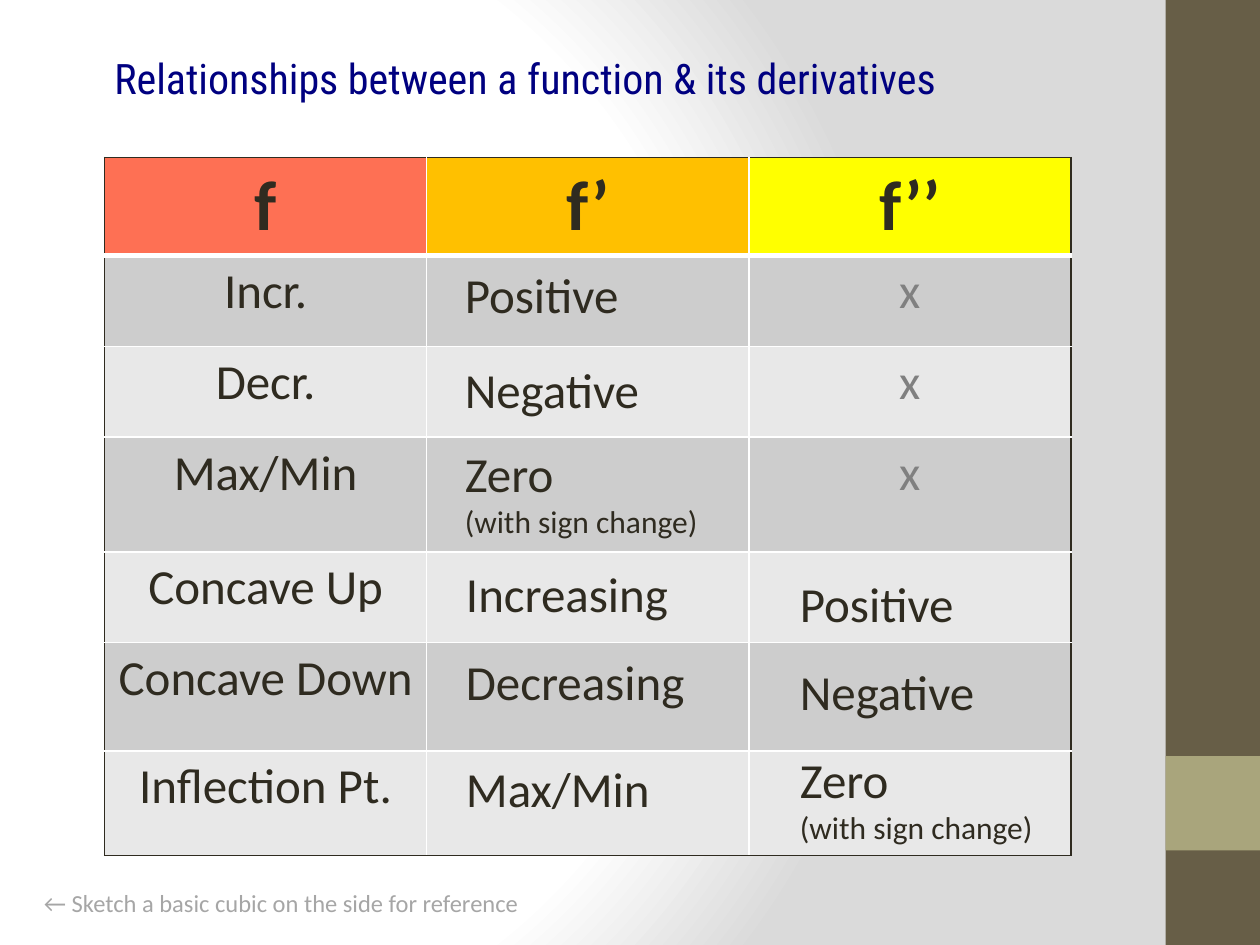
from dataclasses import dataclass

from pptx import Presentation
from pptx.dml.color import RGBColor
from pptx.enum.shapes import MSO_SHAPE
from pptx.enum.text import MSO_AUTO_SIZE, PP_ALIGN
from pptx.oxml import parse_xml
from pptx.oxml.ns import nsdecls
from pptx.util import Inches, Pt

INK, WHITE, GRAY = "2F2B20", "FFFFFF", "808080"
NOTE = "(with sign change)"


@dataclass
class Band:
    top: float
    height: float
    color: str


@dataclass
class Line:
    text: str
    note: str = ""
    before: float = 0
    spacing: float = 1.5
    size: float = 28
    font: str = "Calibri"
    color: str = INK


@dataclass
class TextBlock:
    left: float
    top: float
    width: float
    height: float
    lines: list[Line]
    grows: bool = True


def rgb(color: str) -> RGBColor:
    return RGBColor.from_string(color)


def set_values(target, values: dict) -> None:
    for name, value in values.items():
        setattr(target, name, value)


def add_words(paragraph, text: str, size: float, color: str = INK,
              font: str = "Calibri", bold: bool = False) -> None:
    run = paragraph.add_run()
    run.text = text
    set_values(run.font, {"name": font, "size": Pt(size), "bold": bold})
    run.font.color.rgb = rgb(color)


def add_band(slide, band: Band) -> None:
    side = slide.shapes.add_shape(MSO_SHAPE.RECTANGLE, Inches(9.25), Inches(band.top),
                                  Inches(0.75), Inches(band.height))
    side.shadow.inherit = False
    side.fill.solid()
    side.fill.fore_color.rgb = rgb(band.color)
    side.line.fill.background()


def add_text_block(slide, block: TextBlock) -> None:
    frame = slide.shapes.add_textbox(Inches(block.left), Inches(block.top),
                                     Inches(block.width), Inches(block.height)).text_frame
    frame.word_wrap = True
    frame.auto_size = MSO_AUTO_SIZE.SHAPE_TO_FIT_TEXT if block.grows else MSO_AUTO_SIZE.NONE
    for index, line in enumerate(block.lines):
        paragraph = frame.add_paragraph() if index else frame.paragraphs[0]
        set_values(paragraph, {"line_spacing": line.spacing, "space_before": Pt(line.before)})
        add_words(paragraph, line.text, line.size, line.color, line.font)
        if line.note:
            paragraph.add_line_break()
            add_words(paragraph, line.note, 18)


def add_border(cell, side: str, color: str, width: float) -> None:
    cell._tc.get_or_add_tcPr().append(parse_xml(
        f'<a:ln{side} {nsdecls("a")} w="{Pt(width)}"><a:solidFill>'
        f'<a:srgbClr val="{color}"/></a:solidFill></a:ln{side}>'))


def add_relationship_table(slide, rows: list[tuple], heights: list[float]) -> None:
    headings = ["FE7054", "FFC000", "FFFF00"]
    stripes = ["E8E8E8", "CDCDCD"]
    last_row, last_column = len(rows) - 1, len(headings) - 1
    table = slide.shapes.add_table(len(rows), len(headings), Inches(0.83), Inches(1.25),
                                   Inches(7.67), Inches(sum(heights))).table
    set_values(table, {"first_row": False, "horz_banding": False})
    for column in table.columns:
        column.width = Inches(7.67 / 3)
    for r, (texts, height) in enumerate(zip(rows, heights)):
        table.rows[r].height = Inches(height)
        for c, text in enumerate(texts):
            cell = table.cell(r, c)
            # Dark outer frame, white inner rules, thick rule under the heading
            add_border(cell, "L", INK if c == 0 else WHITE, 1)
            add_border(cell, "R", INK if c == last_column else WHITE, 1)
            add_border(cell, "T", INK if r == 0 else WHITE, 3 if r == 1 else 1)
            add_border(cell, "B", INK if r == last_row else WHITE, 3 if r == 0 else 1)
            cell.fill.solid()
            cell.fill.fore_color.rgb = rgb(stripes[r % 2] if r else headings[c])
            if text:
                paragraph = cell.text_frame.paragraphs[0]
                paragraph.alignment = PP_ALIGN.CENTER
                add_words(paragraph, text, 28 if r else 40,
                          GRAY if text == "x" else INK, bold=r == 0)


def set_background(slide) -> None:
    stops = "".join(f'<a:gs pos="{position * 1000}"><a:srgbClr val="{color}"/></a:gs>'
                    for position, color in [(0, WHITE), (75, WHITE), (100, "DADADA")])
    slide._element.cSld.insert(0, parse_xml(
        f'<p:bg {nsdecls("p", "a")}><p:bgPr><a:gradFill rotWithShape="1">'
        f'<a:gsLst>{stops}</a:gsLst><a:path path="circle">'
        '<a:fillToRect l="20000" t="50000" r="100000" b="50000"/></a:path>'
        '</a:gradFill><a:effectLst/></p:bgPr></p:bg>'))


BANDS = [Band(0, 7.5, "675E47"), Band(6, 0.75, "A9A57C")]

ROWS = [
    ("f", "f’", "f’’"),
    ("Incr.", "", "x"),
    ("Decr.", "", "x"),
    ("Max/Min", "", "x"),
    ("Concave Up", "", ""),
    ("Concave Down", "", ""),
    ("Inflection Pt.", "", ""),
]
HEIGHTS = [0.78, 0.72, 0.72, 0.91, 0.72, 0.86, 0.83]

TEXT_BLOCKS = [
    # Title and reminder
    TextBlock(0.81, 0.37, 7.94, 0.92, [
        Line("Relationships between a function & its derivatives", spacing=1.0,
             size=24, font="Roboto Condensed", color="000080")], grows=False),
    TextBlock(0.25, 7, 4.53, 0.34, [
        Line("← Sketch a basic cubic on the side for reference", spacing=1.0,
             size=14, color="A6A6A6")]),
    # Answers laid over the f’ and f’’ columns
    TextBlock(3.59, 1.82, 2.25, 2.53, [
        Line("Positive"), Line("Negative", before=3.5),
        Line("Zero ", NOTE, before=14.5, spacing=1.0)]),
    TextBlock(3.6, 4.19, 2.5, 2.4, [
        Line("Increasing"), Line("Decreasing"), Line("Max/Min", before=10.5)]),
    TextBlock(6.25, 4.27, 2.25, 2.53, [
        Line("Positive"), Line("Negative"),
        Line("Zero ", NOTE, before=16.5, spacing=1.0)]),
]


def main() -> None:
    presentation = Presentation()
    set_values(presentation, {"slide_width": Inches(10), "slide_height": Inches(7.5)})
    slide = presentation.slides.add_slide(presentation.slide_layouts[6])
    set_background(slide)
    for band in BANDS:
        add_band(slide, band)
    add_relationship_table(slide, ROWS, HEIGHTS)
    for block in TEXT_BLOCKS:
        add_text_block(slide, block)
    presentation.save("out.pptx")


if __name__ == "__main__":
    main()
